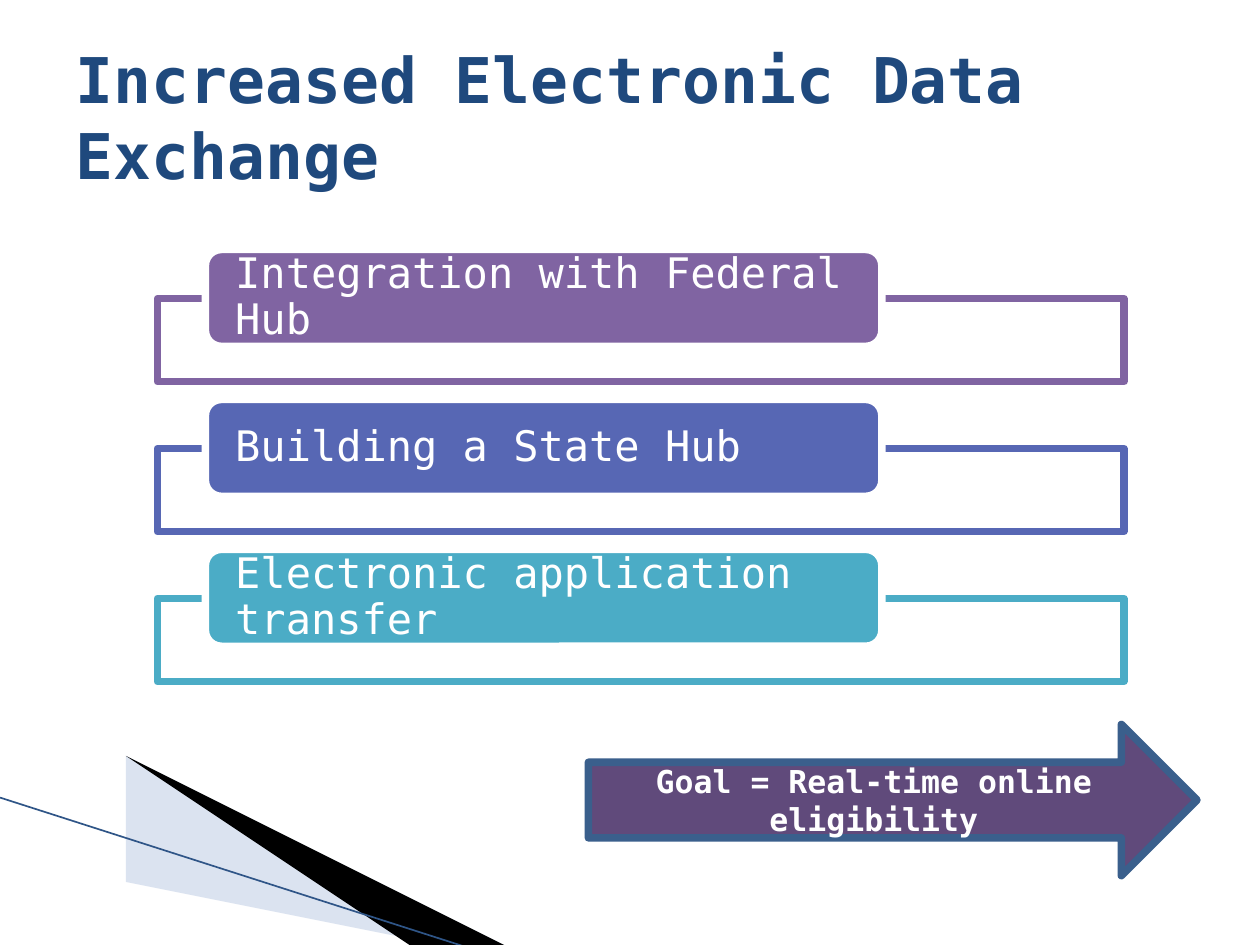
"""Build the slide on increased electronic data exchange."""
from lxml import etree
from pptx import Presentation
from pptx.dml.color import RGBColor
from pptx.enum import shapes, text
from pptx.oxml.ns import qn
from pptx.util import Inches, Pt


def paint(color_format, color, alpha=None):
    color_format.rgb = RGBColor.from_string(color)
    if alpha is not None:
        node = color_format._xFill.find(qn("a:srgbClr"))
        etree.SubElement(node, qn("a:alpha")).set("val", str(alpha * 1000))


def write(shape, wording, color, size, bold, align, inset=0.1, spacing=1.0):
    frame = shape.text_frame
    frame.text = wording
    side = Inches(inset)
    frame_format = {
        "word_wrap": True,
        "auto_size": text.MSO_AUTO_SIZE.NONE,
        "vertical_anchor": text.MSO_ANCHOR.MIDDLE,
        "margin_left": side,
        "margin_right": side,
    }
    for key, value in frame_format.items():
        setattr(frame, key, value)
    paragraph = frame.paragraphs[0]
    paragraph.alignment = align
    paragraph.line_spacing = spacing
    font = paragraph.runs[0].font
    for key, value in {"name": "DejaVu Sans Mono", "size": Pt(size), "bold": bold}.items():
        setattr(font, key, value)
    paint(font.color, color)


LEFT, CENTER = text.PP_ALIGN.LEFT, text.PP_ALIGN.CENTER
BORDER = Pt(4.33)

prs = Presentation()
prs.slide_width, prs.slide_height = Inches(10), Inches(7.5)
slide = prs.slides.add_slide(prs.slide_layouts[5])

wedges = [
    ([(0.55, 6.51), (5.95, 7.51), (4.56, 7.51), (0.55, 6.5)], "A7B9DB", 40),
    ([(0.53, 6.49), (4.57, 7.51), (3.72, 7.52), (0.54, 6.5)], "000000", None),
]
for points, color, alpha in wedges:
    outline = slide.shapes.build_freeform(*points[0], scale=Inches(1))
    outline.add_line_segments(points[1:], close=True)
    wedge = outline.convert_to_shape()
    wedge.shadow.inherit = False
    wedge.fill.solid()
    paint(wedge.fill.fore_color, color, alpha)
    wedge.line.fill.background()

edge = slide.shapes.add_connector(
    shapes.MSO_CONNECTOR.STRAIGHT, Inches(0), Inches(6.33), Inches(3.71), Inches(7.52))
paint(edge.line.color, "2F5587")
edge.line.width = Pt(0.95)
etree.SubElement(edge._element.spPr, qn("a:effectLst"))

title = slide.shapes.title
title_place = {"left": 0.5, "top": 0.3, "width": 9, "height": 1.25}
for key, value in title_place.items():
    setattr(title, key, Inches(value))
write(title, "Increased Electronic Data Exchange", "1F497D", 36, True, LEFT)

steps = [
    ("Integration with Federal Hub", "8064A2"),
    ("Building a State Hub", "5767B4"),
    ("Electronic application transfer", "4BACC6"),
]
for row, (wording, color) in enumerate(steps):
    top = 1.98 + 1.19 * row
    frame_box = slide.shapes.add_shape(
        shapes.MSO_SHAPE.RECTANGLE, Inches(1.25), Inches(top + 0.39), Inches(7.67), Inches(0.66))
    label = slide.shapes.add_shape(
        shapes.MSO_SHAPE.ROUNDED_RECTANGLE, Inches(1.63), Inches(top), Inches(5.37), Inches(0.77))
    for part, fill, alpha, line in (
            (frame_box, "FFFFFF", 90, color), (label, color, None, "FFFFFF")):
        part.shadow.inherit = False
        part.fill.solid()
        paint(part.fill.fore_color, fill, alpha)
        paint(part.line.color, line)
        part.line.width = BORDER
    write(label, wording, "FFFFFF", 24, False, LEFT, inset=0.2, spacing=0.9)
    label.text_frame.margin_top = label.text_frame.margin_bottom = Inches(0)

goal = slide.shapes.add_shape(
    shapes.MSO_SHAPE.RIGHT_ARROW, Inches(4.67), Inches(5.75), Inches(4.83), Inches(1.2))
goal.shadow.inherit = False
goal.fill.solid()
paint(goal.fill.fore_color, "604A7B")
paint(goal.line.color, "3A5F8C")
goal.line.width = BORDER
write(goal, "Goal = Real-time online eligibility", "FFFFFF", 18, True, CENTER)

prs.save("out.pptx")
